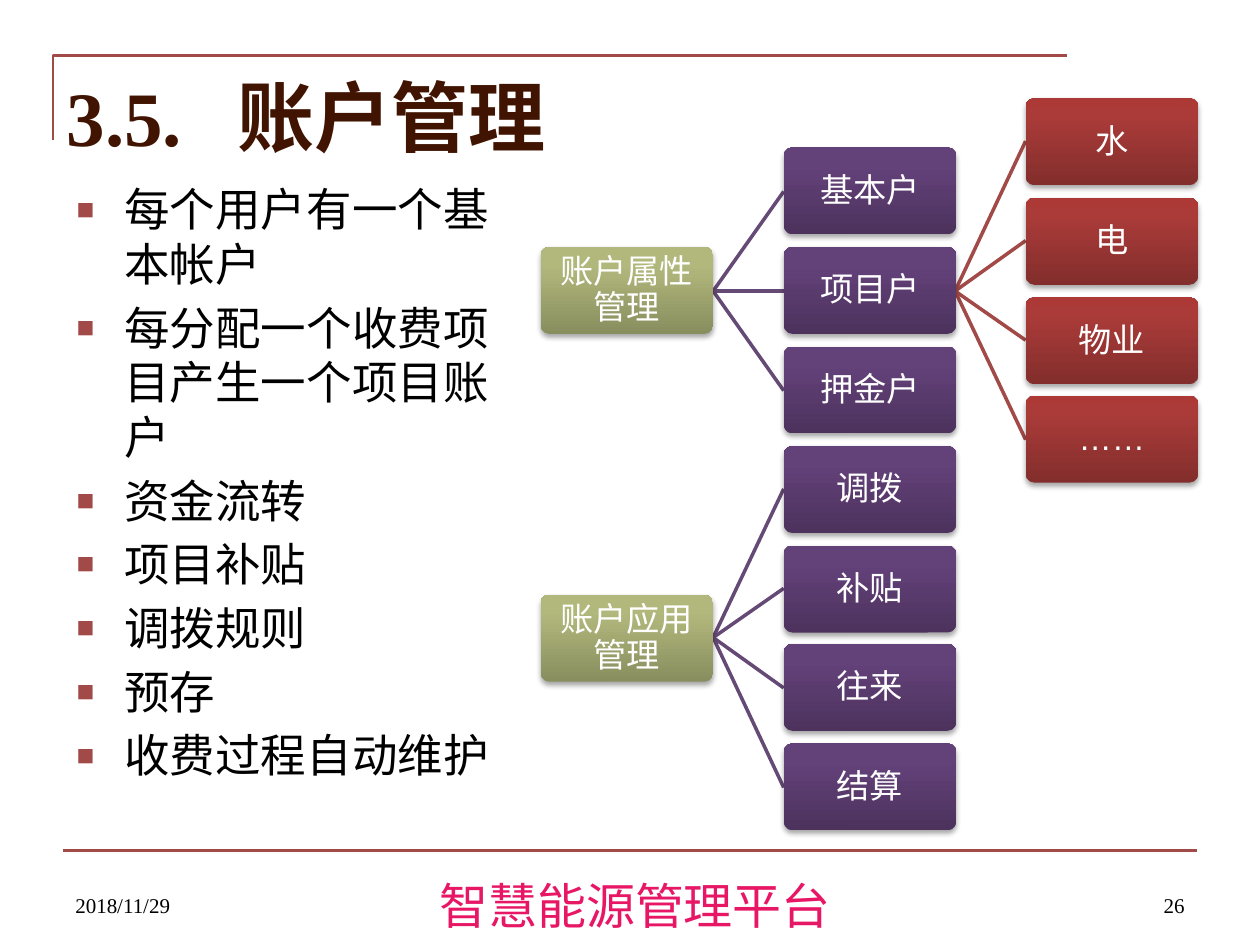
from lxml import etree
from pptx import Presentation
from pptx.dml.color import RGBColor
from pptx.enum.shapes import MSO_CONNECTOR, MSO_SHAPE
from pptx.enum.text import MSO_ANCHOR, PP_ALIGN
from pptx.oxml.ns import qn
from pptx.util import Pt

PX = 9144
LEFT, MID, RIGHT = PP_ALIGN.LEFT, PP_ALIGN.CENTER, PP_ALIGN.RIGHT
TOP, CORE, BASE = MSO_ANCHOR.TOP, MSO_ANCHOR.MIDDLE, MSO_ANCHOR.BOTTOM
ROUND, LINE = MSO_SHAPE.ROUNDED_RECTANGLE, MSO_CONNECTOR.STRAIGHT
SERIF, SANS, HAN = "Times New Roman", "Arial", "Noto Sans CJK SC"
EAST = {SERIF: HAN, SANS: SANS, HAN: HAN}
HUES = {
    "rule": "A24A48", "title": "411401", "ink": "000000",
    "foot": "E81766", "white": "FFFFFF", "purple": "654A76",
}
FILLS = [
    ("898E5F", "B2B87C", "B4BA7B"),
    ("4C325D", "634179", "64417A"),
    ("832E2C", "AA3B39", "AD3937"),
]
EDGES = [None, "purple", "rule"]
NODE = (137, 69)
STEP = {"x": 192.5, "y": 78.8}
TREE = [
    ("账户属性管理", [
        ("基本户", []),
        ("项目户", [("水", []), ("电", []), ("物业", []), ("……", [])]),
        ("押金户", []),
    ]),
    ("账户应用管理", [("调拨", []), ("补贴", []), ("往来", []), ("结算", [])]),
]
POINTS = [
    "每个用户有一个基本帐户", "每分配一个收费项目产生一个项目账户", "资金流转",
    "项目补贴", "调拨规则", "预存", "收费过程自动维护",
]


def emu(*nums):
    return [round(n) * PX for n in nums]


def hue(name):
    return RGBColor.from_string(HUES[name])


def add(root, tag, **attrs):
    return etree.SubElement(root, qn(tag), attrs)


def put(item, vals):
    for key, val in vals.items():
        setattr(item, key, val)


def write(para, text, size, face, color, **form):
    put(para, form)
    run = para.add_run()
    run.text = text
    put(run.font, {"size": Pt(size), "name": face})
    run.font.color.rgb = hue(color)
    add(run.font._element, "a:ea", typeface=EAST[face])
    return run


def label(slide, box, text, size, face, color, anchor=TOP, **form):
    frame = slide.shapes.add_textbox(*emu(*box)).text_frame
    put(frame, {"word_wrap": True, "vertical_anchor": anchor})
    return write(frame.paragraphs[0], text, size, face, color, **form)


def stroke(slide, start, end, color, width):
    line = slide.shapes.add_connector(LINE, *emu(*start, *end))
    line.line.color.rgb = hue(color)
    line.line.width = Pt(width)
    add(line._element.spPr, "a:effectLst")


def head(slide, box):
    left, top, width, height = box
    pen = slide.shapes.build_freeform(left, top + 67, scale=PX)
    pen.add_line_segments([(left, top), (left + 805, top)], close=False)
    frame = pen.convert_to_shape()
    frame.shadow.inherit = False
    frame.fill.background()
    frame.line.color.rgb = hue("rule")
    frame.line.width = Pt(1.5)
    area = slide.shapes.add_textbox(*emu(left + 1, top + 2, width - 1, height))
    area.text_frame.word_wrap = True
    para = area.text_frame.paragraphs[0]
    tabs = add(para._p.get_or_add_pPr(), "a:tabLst")
    add(tabs, "a:tab", pos=str(136 * PX), algn="l")
    run = write(para, "3.5.\t账户管理", 44, SERIF, "title", line_spacing=Pt(56))
    run.font.bold = True


def points(slide, box):
    frame = slide.shapes.add_textbox(*emu(*box)).text_frame
    frame.word_wrap = True
    for num, text in enumerate(POINTS):
        para = frame.add_paragraph() if num else frame.paragraphs[0]
        props = para._p.get_or_add_pPr()
        for key, val in {"marL": 38, "indent": -38}.items():
            props.set(key, str(val * PX))
        add(add(props, "a:buClr"), "a:srgbClr", val=HUES["rule"])
        add(props, "a:buSzPct", val="65000")
        add(props, "a:buFont", typeface=SANS)
        add(props, "a:buChar", char="■")
        write(para, text, 26, SANS, "ink", line_spacing=Pt(31.2),
              space_before=Pt(5.2 if num else 0))


def node(slide, box, text, level):
    shape = slide.shapes.add_shape(ROUND, *emu(*box))
    shape.adjustments[0] = 0.1
    shape.line.fill.background()
    props = shape._element.spPr
    grad = etree.Element(qn("a:gradFill"), rotWithShape="1")
    stops = add(grad, "a:gsLst")
    for pos, color in zip((0, 80000, 100000), FILLS[level]):
        add(add(stops, "a:gs", pos=str(pos)), "a:srgbClr", val=color)
    add(grad, "a:lin", ang="16200000", scaled="0")
    props.find(qn("a:prstGeom")).addnext(grad)
    glow = add(add(props, "a:effectLst"), "a:outerShdw", blurRad="39370",
               dist="22860", dir="5400000", rotWithShape="0")
    add(add(glow, "a:srgbClr", val="000000"), "a:alpha", val="35000")
    frame = shape.text_frame
    put(frame, {"word_wrap": True, "vertical_anchor": CORE})
    for side in ("left", "right", "top", "bottom"):
        setattr(frame, "margin_" + side, 3 * PX)
    write(frame.paragraphs[0], text, 19, SANS, "white", alignment=MID,
          line_spacing=Pt(20.5))


def branch(slide, box, item, row, level=0):
    text, kids = item
    width, height = NODE
    left = box[0] + level * STEP["x"]
    top = box[1] + (row + 0.5) * STEP["y"]
    for num, kid in enumerate(kids):
        spot = row + num - (len(kids) - 1) / 2
        drop = (spot - row) * STEP["y"]
        core = top + height / 2
        stroke(slide, (left + width, core), (left + STEP["x"], core + drop),
               EDGES[level + 1], 2)
        branch(slide, box, kid, spot, level + 1)
    node(slide, (left, top, width, height), text, level)


def tree(slide, box):
    row = 0
    for item in TREE:
        count = len(item[1])
        branch(slide, box, item, row + (count - 1) / 2)
        row += count


def foot(slide, box):
    left, top, width, height = box
    stroke(slide, (left, top), (left + width, top), "rule", 1.5)
    label(slide, (left + 264, top + 12, 380, 60), "智慧能源管理平台", 28, HAN,
          "foot", alignment=MID, line_spacing=Pt(36))
    for side, text, align in ((0, "2018/11/29", LEFT), (width - 233, "26", RIGHT)):
        label(slide, (left + side, top + 8, 233, height - 8), text, 12, SERIF,
              "ink", anchor=BASE, alignment=align)


def main():
    deck = Presentation()
    put(deck, {"slide_width": 1000 * PX, "slide_height": 750 * PX})
    slide = deck.slides.add_slide(deck.slide_layouts[6])
    head(slide, (42, 44, 909, 77))
    tree(slide, (429, 78, 522, 582))
    points(slide, (51, 139, 354, 532))
    foot(slide, (50, 675, 900, 58))
    deck.save("out.pptx")


if __name__ == "__main__":
    main()
